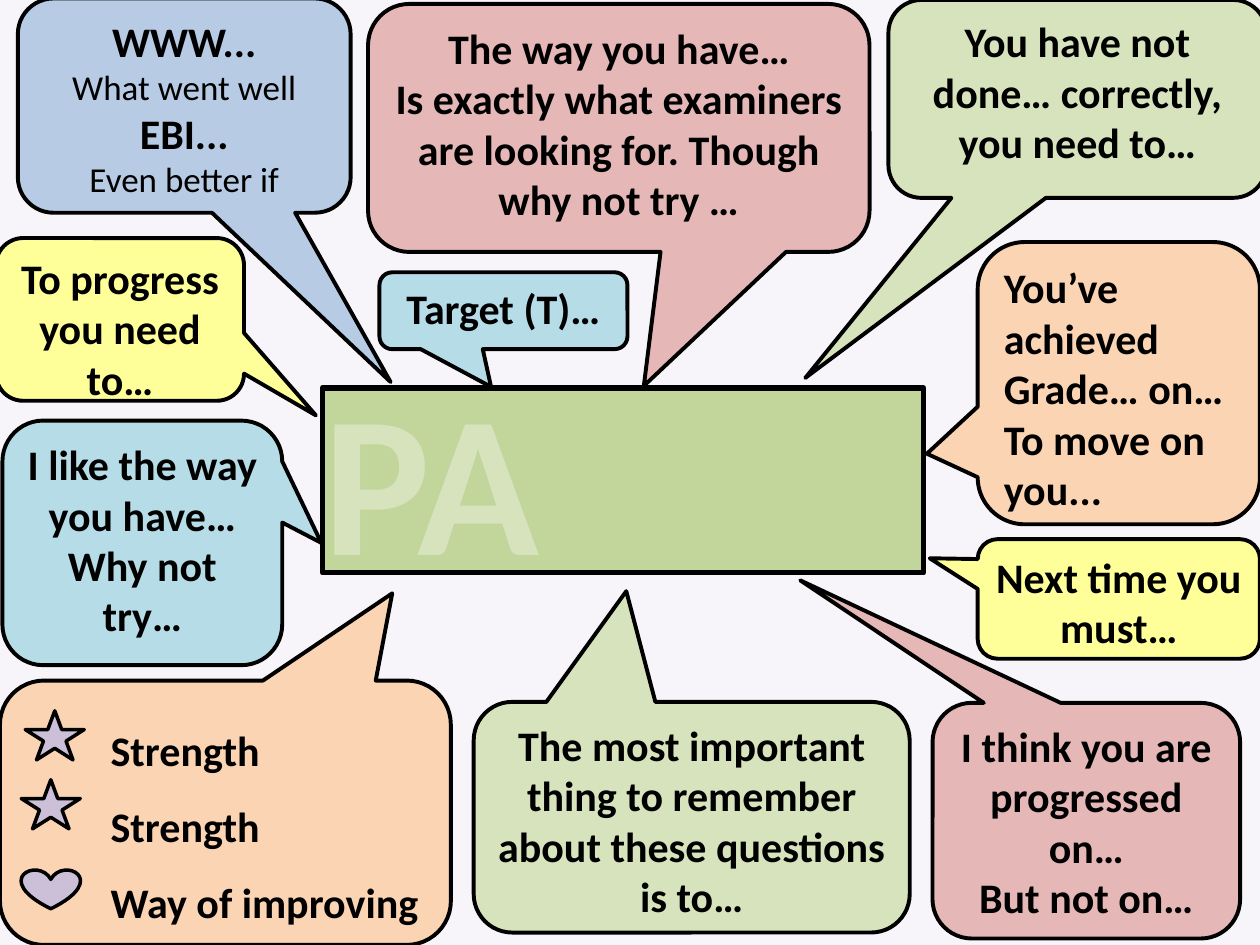
from pptx import Presentation, util as u
from pptx.dml.color import RGBColor
from pptx.enum import shapes, text

Cm, Pt = u.Cm, u.Pt
Kind = shapes.MSO_SHAPE
Align = text.PP_ALIGN

BLACK = "000000"
PINK, GREEN, BLUE = "E5B8B7", "D6E3BC", "B7CCE4"
AQUA, PEACH, YELLOW = "B6DDE7", "FBD4B4", "FFFF99"
LILAC, OLIVE, PALE = "CCC0D9", "C2D59B", "F8F5FA"


def colour(hex_code):
    return RGBColor.from_string(hex_code)


class Board:
    """Holds the style and the current slide."""
    font = "Calibri"
    size = 24

    def __init__(self, slide):
        self.slide = slide

    def background(self, fill):
        background = self.slide.background.fill
        background.solid()
        background.fore_color.rgb = colour(fill)

    def shape(self, kind, box, fill, line_width):
        shape = self.slide.shapes.add_shape(kind, *map(Cm, box))
        shape.shadow.inherit = False
        shape.fill.solid()
        shape.fill.fore_color.rgb = colour(fill)
        shape.line.color.rgb = colour(BLACK)
        shape.line.width = Pt(line_width)
        return shape

    def set_wording(self, shape, wording, size, ink, align):
        frame = shape.text_frame
        frame.word_wrap = True
        frame.vertical_anchor = text.MSO_ANCHOR.TOP
        frame.text = wording
        for paragraph in frame.paragraphs:
            paragraph.alignment = align
            paragraph.font.name = self.font
            paragraph.font.size = Pt(size)
            paragraph.font.bold = True
            paragraph.font.color.rgb = colour(ink)
        return frame.paragraphs

    def callout(self, box, tip, fill, wording, align=Align.CENTER):
        shape = self.shape(Kind.ROUNDED_RECTANGULAR_CALLOUT, box, fill, 2.25)
        shape.adjustments[0], shape.adjustments[1] = tip
        return self.set_wording(shape, wording, self.size, BLACK, align)

    def label(self, box, wording, size, ink):
        shape = self.slide.shapes.add_textbox(*map(Cm, box))
        return self.set_wording(shape, wording, size, ink, Align.CENTER)


def main():
    presentation = Presentation()
    presentation.slide_width, presentation.slide_height = Cm(25.4), Cm(19.05)
    board = Board(presentation.slides.add_slide(presentation.slide_layouts[6]))
    board.background(PALE)

    # Callouts behind the central panel
    board.callout((7.42, 0.08, 10.11, 5), (0.05, 1.04), PINK,
                  "The way you have…\nIs exactly what examiners are looking for. "
                  "Though why not try …")
    board.callout((17.91, 0, 7.62, 3.99), (-0.72, 1.41), GREEN,
                  "You have not done… correctly, you need to…")
    board.callout((9.55, 14.15, 8.79, 4.65), (-0.15, -0.98), GREEN,
                  "The most important thing to remember about these questions is to…")

    # Central panel
    board.shape(Kind.RECTANGLE, (6.5, 7.82, 12.12, 3.73), OLIVE, 3)

    # What went well / even better if
    review = board.callout((0.36, -0.03, 6.71, 4.32), (0.62, 1.29), BLUE,
                           "WWW...\nWhat went well\nEBI...\nEven better if")
    for paragraph in review[1::2]:
        paragraph.font.size = Pt(20)
        paragraph.font.bold = False

    board.callout((0.05, 8.48, 5.64, 4.93), (0.64, 0), AQUA,
                  "I like the way you have…\nWhy not try…")

    # Strengths and improvement, with their symbols
    points = board.callout((0, 13.72, 9.09, 5.33), (0.37, -0.83), PEACH,
                           "Strength\nStrength\nWay of improving", Align.LEFT)
    for paragraph in points:
        paragraph.line_spacing = 1.5
        paragraph._p.get_or_add_pPr().set("marL", str(int(Cm(1.72))))
    for kind, left, top, height in ((Kind.HEART, 0.43, 17.53, 0.79),
                                    (Kind.STAR_5_POINT, 0.51, 14.33, 0.99),
                                    (Kind.STAR_5_POINT, 0.43, 15.72, 0.99)):
        board.shape(kind, (left, top, 1.19, height), LILAC, 2)

    # Remaining callouts around the panel
    board.callout((-0.08, 4.8, 5, 3.28), (0.79, 0.59), YELLOW,
                  "To progress you need to…")
    board.callout((19.71, 10.87, 5.69, 2.41), (-0.67, -0.34), YELLOW,
                  "Next time you must…")
    board.callout((18.8, 14.17, 6.2, 4.75), (-0.93, -1.02), PINK,
                  "I think you are progressed on…\nBut not on…")
    board.callout((7.65, 5.49, 5, 1.55), (-0.05, 0.99), AQUA, "Target (T)…")
    board.callout((19.71, 4.88, 5.69, 5.69), (-0.68, 0.25), PEACH,
                  "You’ve achieved Grade… on…\nTo move on you...", Align.LEFT)

    # Large initials on the panel
    board.label((6.25, 7.01, 4.9, 5.18), "PA", 115, GREEN)

    presentation.save("out.pptx")


if __name__ == "__main__":
    main()
